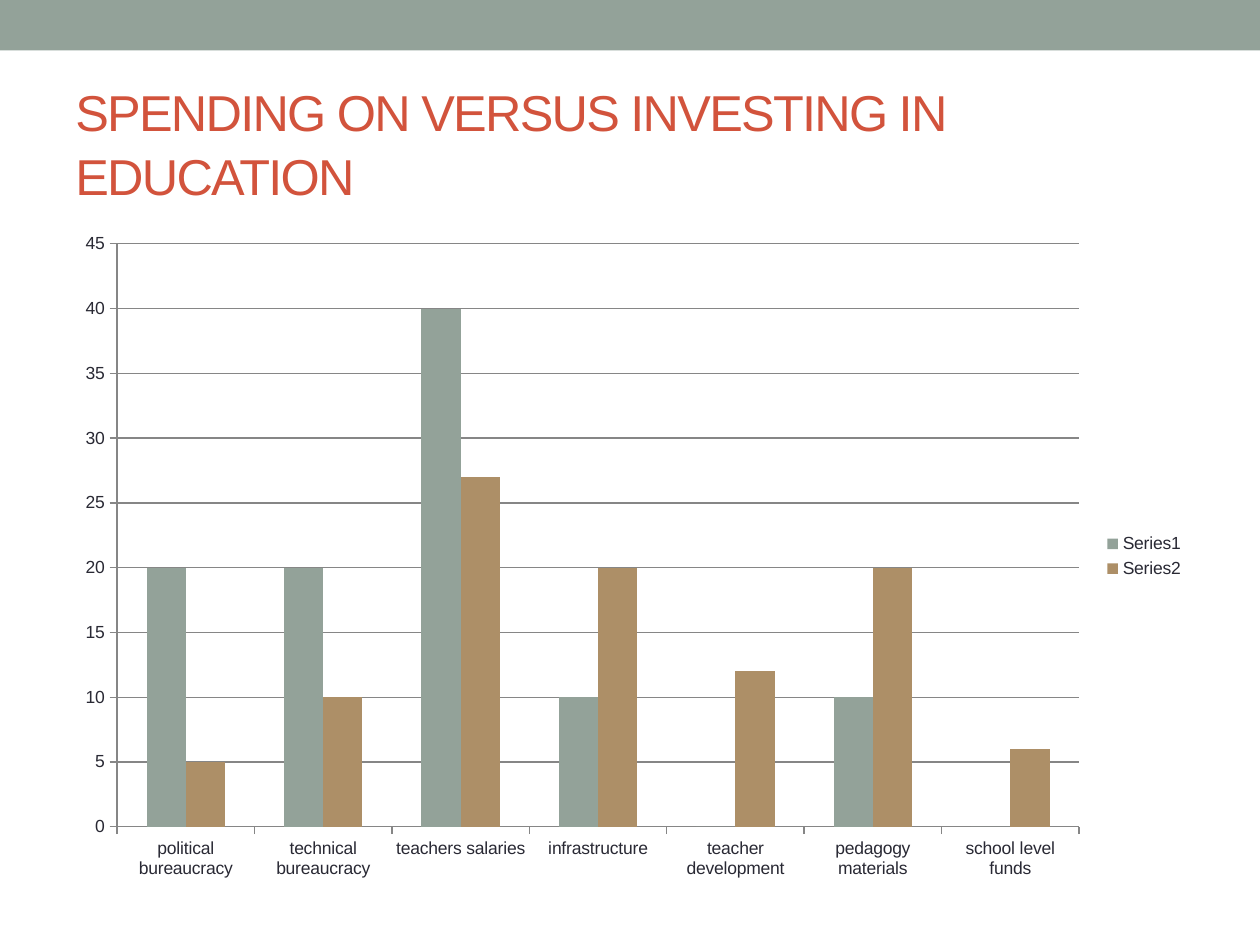
from dataclasses import dataclass

from pptx import Presentation
from pptx.chart.data import CategoryChartData
from pptx.dml.color import RGBColor
from pptx.enum.chart import XL_CHART_TYPE, XL_LEGEND_POSITION, XL_TICK_MARK
from pptx.enum.shapes import MSO_SHAPE
from pptx.enum.text import MSO_ANCHOR
from pptx.util import Inches, Pt

COLUMN = XL_CHART_TYPE.COLUMN_CLUSTERED
RIGHT = XL_LEGEND_POSITION.RIGHT
OUT = XL_TICK_MARK.OUTSIDE
NONE = XL_TICK_MARK.NONE
RECT = MSO_SHAPE.RECTANGLE
MIDDLE = MSO_ANCHOR.MIDDLE

WIDE, HIGH = 10, 7.5
FONT = "Arial"
SAGE, TAN, RED, INK, GREY = "93A299", "AD8F67", "D2533C", "292934", "868686"


@dataclass
class Box:
    left: float
    top: float
    width: float
    height: float

    def place(self) -> tuple:
        return tuple(Inches(n) for n in (self.left, self.top, self.width, self.height))


@dataclass
class Series:
    name: str
    values: tuple
    color: str


MARGIN = 0.05 * WIDE
BODY = WIDE - 2 * MARGIN
BAND = Box(0, 0, WIDE, 0.4)
TITLE = Box(MARGIN, 0.58, BODY, 1.08)
CHART = Box(MARGIN, 1.75, BODY, 5.33)

GROUPS = (
    "political bureaucracy",
    "technical bureaucracy",
    "teachers salaries",
    "infrastructure",
    "teacher development",
    "pedagogy materials",
    "school level funds",
)
SERIES = (
    Series("Series1", (20, 20, 40, 10, 0, 10, 0), SAGE),
    Series("Series2", (5, 10, 27, 20, 12, 20, 6), TAN),
)


def paint(fill, color: str) -> None:
    fill.solid()
    fill.fore_color.rgb = RGBColor.from_string(color)


def style(font, size: float, color: str) -> None:
    font.name = FONT
    font.size = Pt(size)
    paint(font.fill, color)


def rule(line) -> None:
    line.width = Pt(0.75)
    paint(line.fill, GREY)


def add_band(slide, box: Box) -> None:
    band = slide.shapes.add_shape(RECT, *box.place())
    band.shadow.inherit = False
    paint(band.fill, SAGE)
    band.line.fill.background()


def add_title(slide, box: Box, text: str) -> None:
    frame = slide.shapes.add_textbox(*box.place()).text_frame
    frame.word_wrap = True
    frame.vertical_anchor = MIDDLE
    para = frame.paragraphs[0]
    para.line_spacing = 1.07
    run = para.add_run()
    run.text = text
    style(para.font, 28.8, RED)
    run.font._element.set("spc", "-100")


def add_chart(slide, box: Box) -> None:
    data = CategoryChartData()
    data.categories = GROUPS
    for item in SERIES:
        data.add_series(item.name, item.values)
    chart = slide.shapes.add_chart(COLUMN, *box.place(), data).chart
    style(chart.font, 10, INK)
    chart.has_title = False
    chart.has_legend = True
    chart.legend.position = RIGHT
    chart.legend.include_in_layout = False
    plot = chart.plots[0]
    plot.gap_width = 150
    plot.overlap = 0
    plot.vary_by_categories = False
    for bars, item in zip(plot.series, SERIES):
        paint(bars.format.fill, item.color)
    for axis in (chart.category_axis, chart.value_axis):
        axis.major_tick_mark = OUT
        axis.minor_tick_mark = NONE
        rule(axis.format.line)
    chart.value_axis.minimum_scale = 0
    chart.value_axis.maximum_scale = 45
    chart.value_axis.major_unit = 5
    chart.value_axis.has_major_gridlines = True
    rule(chart.value_axis.major_gridlines.format.line)


def main() -> None:
    deck = Presentation()
    deck.slide_width, deck.slide_height = Inches(WIDE), Inches(HIGH)
    slide = deck.slides.add_slide(deck.slide_layouts[6])
    add_band(slide, BAND)
    add_title(slide, TITLE, "SPENDING ON VERSUS INVESTING IN EDUCATION")
    add_chart(slide, CHART)
    deck.save("out.pptx")


if __name__ == "__main__":
    main()
